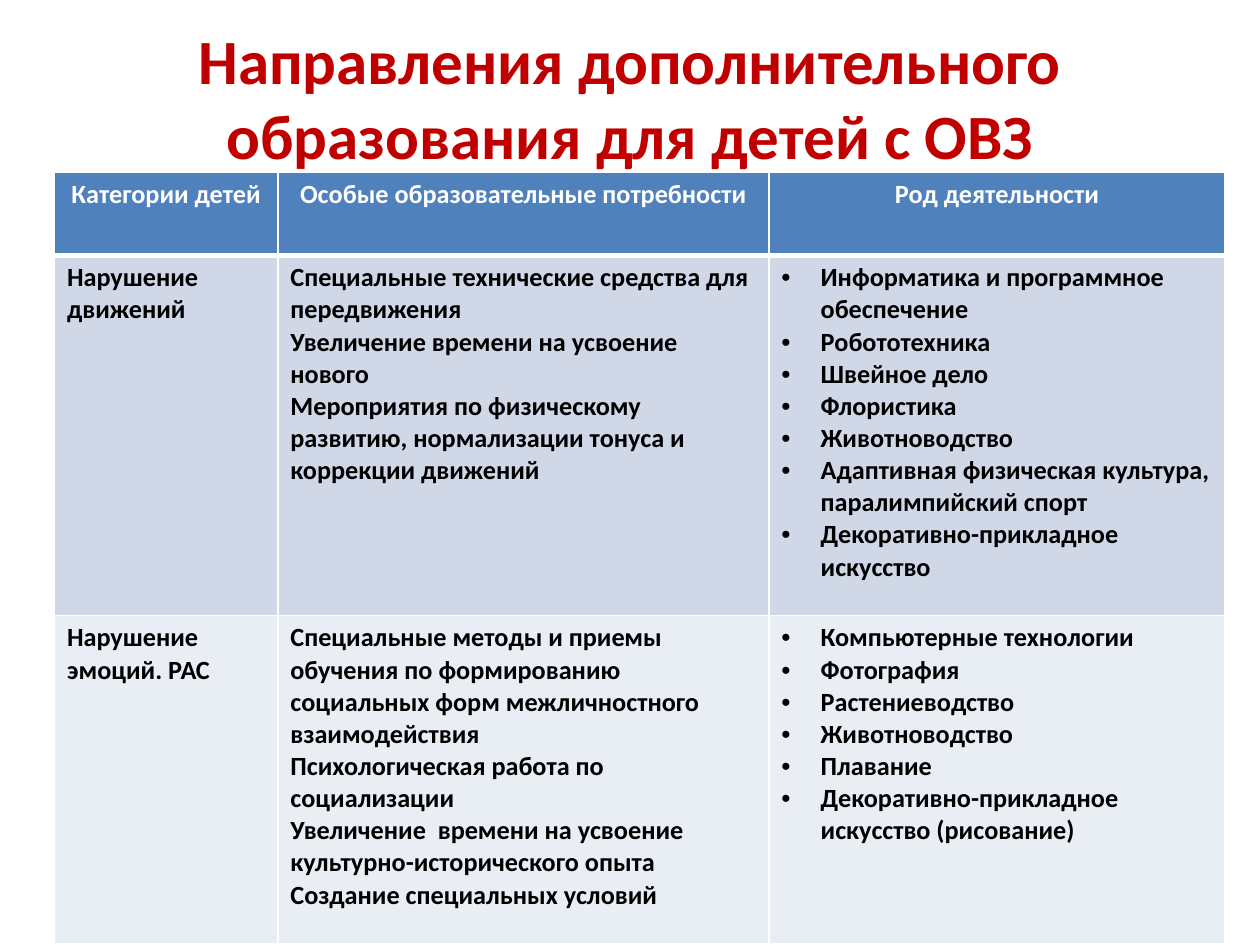
from lxml.etree import SubElement as Sub, Element
from pptx import Presentation
from pptx.dml.color import RGBColor as RGB
from pptx.enum.text import MSO_ANCHOR as Anchor, MSO_AUTO_SIZE as Auto, PP_ALIGN as Align
from pptx.oxml.ns import qn
from pptx.util import Cm, Pt

HUES = {"title": "C00000", "head": "4F81BD", "odd": "D0D8E8", "even": "E9EDF4",
        "white": "FFFFFF", "black": "000000"}
TITLE = "Направления дополнительного образования для детей с ОВЗ"
HEAD = ["Категории детей", "Особые образовательные потребности", "Род деятельности"]
BODY = [
    (["Нарушение движений"],
     ["Специальные технические средства для передвижения",
      "Увеличение времени на усвоение нового",
      "Мероприятия по физическому развитию, нормализации тонуса и коррекции движений"],
     ["Информатика и программное обеспечение", "Робототехника", "Швейное дело",
      "Флористика", "Животноводство",
      "Адаптивная физическая культура, паралимпийский спорт",
      "Декоративно-прикладное искусство"]),
    (["Нарушение эмоций. РАС"],
     ["Специальные методы и приемы обучения по формированию социальных форм "
      "межличностного взаимодействия",
      "Психологическая работа по социализации",
      "Увеличение  времени на усвоение культурно-исторического опыта",
      "Создание специальных условий"],
     ["Компьютерные технологии", "Фотография", "Растениеводство", "Животноводство",
      "Плавание", "Декоративно-прикладное искусство (рисование)"]),
]
WIDTHS = [4.5, 9.9, 9.2]
HEIGHTS = [1.67, 7.26, 6.62]
LIST_COL = 2
INDENT = Cm(0.79)


def style(part, size, hue):
    form = {"name": "Calibri", "size": Pt(size), "bold": True}
    for key, val in form.items():
        setattr(part.font, key, val)
    part.font.color.rgb = RGB.from_string(HUES[hue])


def bullet(par):
    props = par._p.get_or_add_pPr()
    props.set("marL", str(INDENT))
    props.set("indent", str(-INDENT))
    Sub(props, qn("a:buFont"), typeface="Arial")
    Sub(props, qn("a:buChar"), char="•")


def border(cell, row):
    # The rule between header and body is thicker
    wide = {"L": 1, "R": 1, "T": 3 if row == 1 else 1, "B": 3 if row == 0 else 1}
    props = cell._tc.get_or_add_tcPr()
    for spot, (side, width) in enumerate(wide.items()):
        line = Element(qn("a:ln" + side), w=str(Pt(width)))
        Sub(Sub(line, qn("a:solidFill")), qn("a:srgbClr"), val=HUES["white"])
        props.insert(spot, line)


def fill(cell, lines, row, col):
    cell.fill.solid()
    cell.fill.fore_color.rgb = RGB.from_string(HUES[("head", "odd", "even")[row]])
    border(cell, row)
    frame = cell.text_frame
    frame.text = "\n".join(lines)
    for par in frame.paragraphs:
        par.alignment = Align.LEFT if row else Align.CENTER
        if row and col == LIST_COL:
            bullet(par)
        for run in par.runs:
            style(run, 15, "black" if row else "white")


def main():
    deck = Presentation()
    deck.slide_width, deck.slide_height = Cm(25.4), Cm(19.05)
    slide = deck.slides.add_slide(deck.slide_layouts[5])

    # Title
    title = slide.shapes.title
    place = {"left": 1.27, "top": 0.53, "width": 22.86, "height": 2.84}
    for key, val in place.items():
        setattr(title, key, Cm(val))
    frame = title.text_frame
    frame.text = TITLE
    form = {"word_wrap": True, "auto_size": Auto.NONE, "vertical_anchor": Anchor.MIDDLE}
    for key, val in form.items():
        setattr(frame, key, val)
    par = frame.paragraphs[0]
    par.alignment = Align.CENTER
    style(par.runs[0], 36, "title")

    # Table
    rows = [[[text] for text in HEAD], *BODY]
    table = slide.shapes.add_table(len(rows), len(HEAD), Cm(1.1), Cm(3.48),
                                   Cm(sum(WIDTHS)), Cm(sum(HEIGHTS))).table
    for col, width in zip(table.columns, WIDTHS):
        col.width = Cm(width)
    for row, height in zip(table.rows, HEIGHTS):
        row.height = Cm(height)
    for r, row in enumerate(rows):
        for c, lines in enumerate(row):
            fill(table.cell(r, c), lines, r, c)

    deck.save("out.pptx")


if __name__ == "__main__":
    main()
